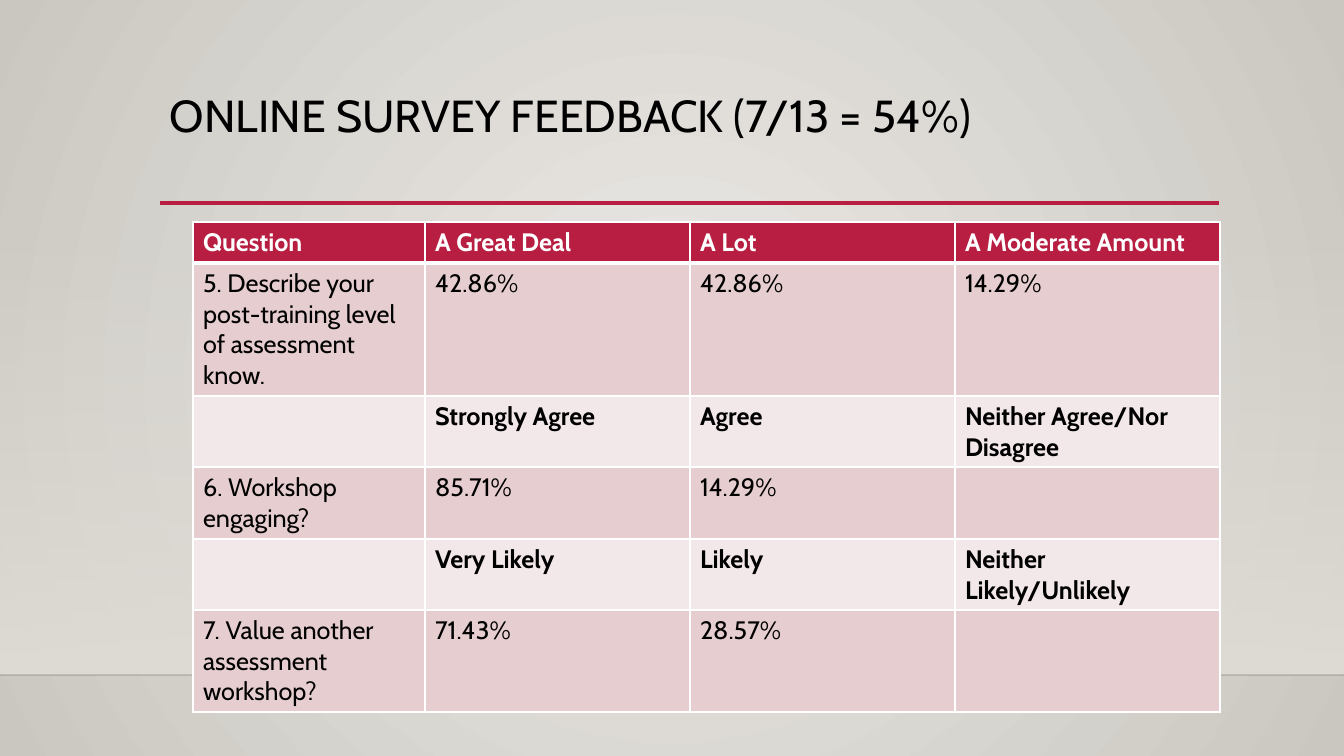
import pptx
import pptx.dml.color
import pptx.enum.shapes
import pptx.enum.text
import pptx.oxml
import pptx.oxml.ns
import pptx.util
from dataclasses import dataclass

EMU_PER_PX = 12192000 / 1344
NAMESPACE = pptx.oxml.ns.nsdecls("a")


@dataclass(frozen=True)
class Theme:
    font: str = "Cabin"
    title_size: int = 32
    table_size: int = 18
    text: str = "000000"
    light: str = "FFFFFF"
    accent: str = "B71E42"
    band_dark: str = "E6CDCF"
    band_light: str = "F3E8E9"
    background_center: str = "ECEAE7"
    background_edge: str = "CAC7C1"
    wall: str = "DFDBD5"
    floor_line: str = "000001"


THEME = Theme()
COLUMN_WIDTHS = [232, 265, 265, 265]
ROW_HEIGHTS = [41, 133, 71, 72, 71, 102]
SURVEY_ROWS = [
    ["Question", "A Great Deal", "A Lot", "A Moderate Amount"],
    ["5. Describe your post-training level of assessment know.",
     "42.86%", "42.86%", "14.29%"],
    ["", "Strongly Agree", "Agree", "Neither Agree/Nor Disagree"],
    ["6. Workshop engaging?", "85.71%", "14.29%", ""],
    ["", "Very Likely", "Likely", "Neither Likely/Unlikely"],
    ["7. Value another assessment workshop?", "71.43%", "28.57%", ""],
]


def px(length):
    return pptx.util.Emu(round(length * EMU_PER_PX))


def color(value):
    return pptx.dml.color.RGBColor.from_string(value)


def set_alpha(color_element, percent):
    color_element.append(pptx.oxml.parse_xml(
        f'<a:alpha {NAMESPACE} val="{percent * 1000}"/>'))


def set_gradient(fill, start, end):
    fill.gradient()
    for stop, value, position in zip(fill.gradient_stops, (start, end), (0, 1)):
        stop.color.rgb = color(value)
        stop.position = position


def paint_background(slide):
    set_gradient(slide.background.fill, THEME.background_center, THEME.background_edge)
    linear = next(slide.background._cSld.iter(pptx.oxml.ns.qn("a:lin")))
    linear.getparent().replace(linear, pptx.oxml.parse_xml(
        f'<a:path {NAMESPACE} path="circle">'
        '<a:fillToRect l="50000" t="50000" r="50000" b="50000"/></a:path>'))


def add_wall(slide, left, top, width, height):
    shape = slide.shapes.add_shape(
        pptx.enum.shapes.MSO_SHAPE.RECTANGLE, px(left), px(top), px(width), px(height))
    shape.shadow.inherit = False
    shape.line.fill.background()
    set_gradient(shape.fill, THEME.wall, THEME.wall)
    shape.fill.gradient_angle = 270
    first_color = next(shape._element.spPr.iter(pptx.oxml.ns.qn("a:srgbClr")))
    set_alpha(first_color, 0)


def add_rule(slide, left, right, y, value, weight, alpha=100):
    connector = slide.shapes.add_connector(
        pptx.enum.shapes.MSO_CONNECTOR.STRAIGHT, px(left), px(y), px(right), px(y))
    connector.line.color.rgb = color(value)
    connector.line.width = pptx.util.Pt(weight)
    properties = connector._element.spPr
    if alpha < 100:
        set_alpha(next(properties.iter(pptx.oxml.ns.qn("a:srgbClr"))), alpha)
    properties.append(pptx.oxml.parse_xml(f"<a:effectLst {NAMESPACE}/>"))


def add_run(paragraph, text, size, value, bold=False):
    run = paragraph.add_run()
    run.text = text
    run.font.name = THEME.font
    run.font.size = pptx.util.Pt(size)
    run.font.bold = bold
    run.font.color.rgb = color(value)


def add_title(slide, text, left, top, width, height):
    box = slide.shapes.add_textbox(px(left), px(top), px(width), px(height))
    frame = box.text_frame
    frame.word_wrap = True
    frame.vertical_anchor = pptx.enum.text.MSO_ANCHOR.TOP
    frame.paragraphs[0].line_spacing = 0.9
    add_run(frame.paragraphs[0], text, THEME.title_size, THEME.text)


def set_borders(cell, bottom_weight):
    properties = cell._tc.get_or_add_tcPr()
    weights = {"lnL": 1, "lnR": 1, "lnT": 1, "lnB": bottom_weight}
    for position, (side, weight) in enumerate(weights.items()):
        properties.insert(position, pptx.oxml.parse_xml(
            f'<a:{side} {NAMESPACE} w="{pptx.util.Pt(weight)}"><a:solidFill>'
            f'<a:srgbClr val="{THEME.light}"/></a:solidFill></a:{side}>'))


def fill_cell(cell, text, row):
    header = row == 0
    band = THEME.band_dark if row % 2 else THEME.band_light
    cell.fill.solid()
    cell.fill.fore_color.rgb = color(THEME.accent if header else band)
    set_borders(cell, 3 if header else 1)
    paragraph = cell.text_frame.paragraphs[0]
    paragraph.font.size = pptx.util.Pt(THEME.table_size)
    if text:
        add_run(paragraph, text, THEME.table_size,
                THEME.light if header else THEME.text, bold=row % 2 == 0)


def add_survey_table(slide, left, top):
    table = slide.shapes.add_table(
        len(ROW_HEIGHTS), len(COLUMN_WIDTHS), px(left), px(top),
        px(sum(COLUMN_WIDTHS)), px(sum(ROW_HEIGHTS))).table
    table.horz_banding = False
    for column, width in zip(table.columns, COLUMN_WIDTHS):
        column.width = px(width)
    for row, height in zip(table.rows, ROW_HEIGHTS):
        row.height = px(height)
    for row, texts in enumerate(SURVEY_ROWS):
        for column, text in enumerate(texts):
            fill_cell(table.cell(row, column), text, row)


def main():
    presentation = pptx.Presentation()
    presentation.slide_width = px(1344)
    presentation.slide_height = px(756)
    slide = presentation.slides.add_slide(presentation.slide_layouts[6])
    paint_background(slide)
    add_wall(slide, 0, 223, 1344, 452)
    add_rule(slide, 0, 1344, 675, THEME.floor_line, 1, alpha=20)
    add_rule(slide, 160, 1219, 203, THEME.accent, 2.5)
    add_title(slide, "ONLINE SURVEY FEEDBACK (7/13 = 54%)", 160, 89, 1059, 116)
    add_survey_table(slide, 193, 222)
    presentation.save("out.pptx")


if __name__ == "__main__":
    main()
